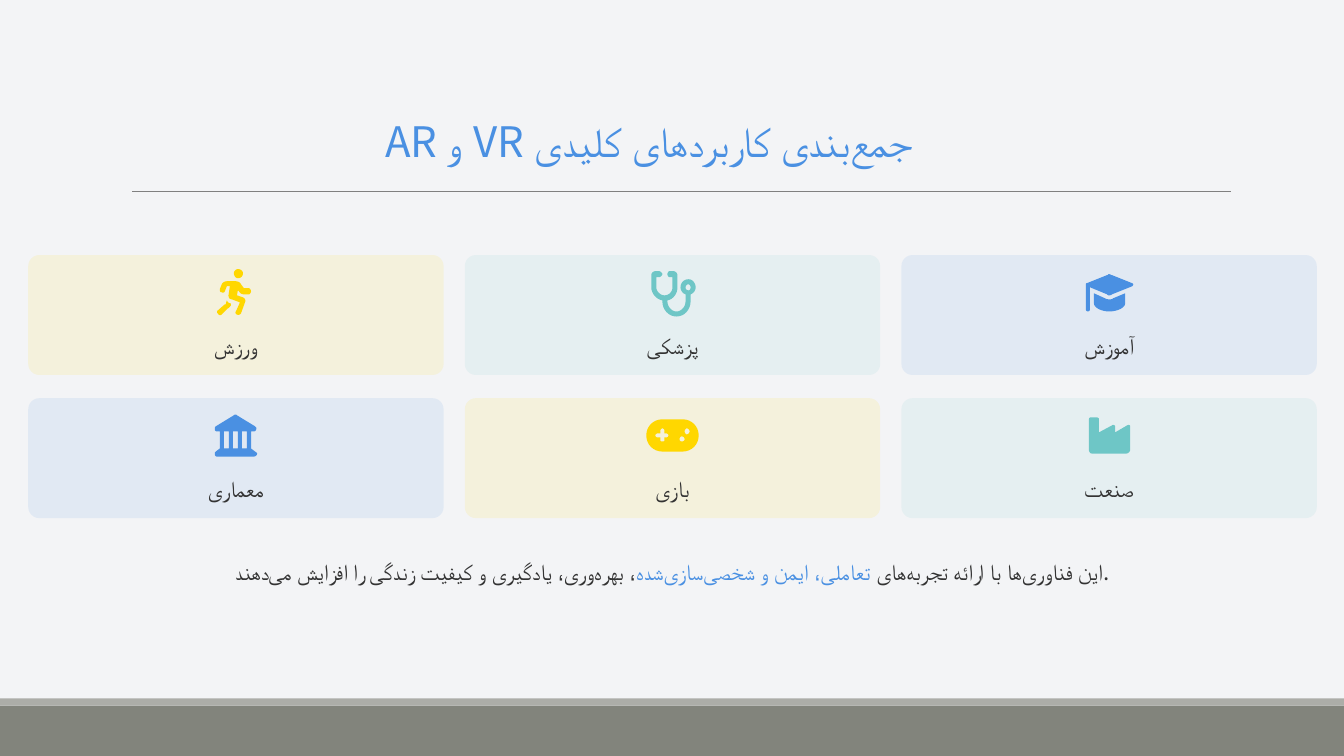
from dataclasses import dataclass

from lxml.etree import SubElement
from pptx import Presentation
from pptx.dml.color import RGBColor
from pptx.enum.shapes import MSO_CONNECTOR as Connector, MSO_SHAPE as Preset
from pptx.enum.text import MSO_ANCHOR as Anchor, MSO_AUTO_SIZE as AutoSize, PP_ALIGN as Align
from pptx.oxml.ns import qn
from pptx.shapes.autoshape import Shape
from pptx.slide import Slide
from pptx.text.text import TextFrame
from pptx.util import Emu, Pt

EMU_PER_PX = 9144  # 100 px to the inch
SLIDE_WIDTH, SLIDE_HEIGHT = 1333, 750
FONT = "Noto Sans CJK SC"
BLUE, TEAL, YELLOW, INK = "4A90E2", "6EC6C6", "FFD700", "333333"
CARD_COLORS = (BLUE, TEAL, YELLOW)
NON_JOINER = chr(0x200C)  # Persian half-space

COLUMNS = 3
CARD_WIDTH, CARD_HEIGHT, CARD_RADIUS = 412, 119, 11
RIGHT_CARD_LEFT, TOP_CARD_TOP = 894, 253
COLUMN_PITCH, ROW_PITCH = 433, 142
ICON_DROP, LABEL_DROP, LINE_HEIGHT = 16, 69, 33
CURVE_STEPS = 8

GRADUATION_CAP = """
M 4 16 L 21 23 C 22 24 22 24 23 24 C 24 24 25 24 26 23 L 46 15 C 46 15 47 14 47 13
C 47 13 46 12 46 12 L 26 4 C 25 4 24 3 23 3 C 22 3 22 4 21 4 L 1 12 C 0 12 0 13 0 13
L 0 38 C 0 39 1 40 2 40 C 3 40 4 39 4 38
M 8 22 L 8 32 C 8 36 15 40 23 40 C 32 40 39 36 39 32 L 39 22 L 27 27
C 26 28 25 28 23 28 C 22 28 21 28 19 27"""
STETHOSCOPE = """
M 2 4 C 2 2 4 0 6 0 L 10 0 C 11 0 13 2 13 3 C 13 4 11 6 10 6 L 7 6 L 7 16
C 7 20 11 24 15 24 C 20 24 23 20 23 16 L 23 6 L 20 6 C 19 6 18 4 18 3 C 18 2 19 0 20 0
L 24 0 C 26 0 28 2 28 4 L 28 16 C 28 22 24 28 18 29 L 18 30 C 18 35 22 40 27 40
C 32 40 36 35 36 30 L 36 23 C 33 22 31 19 31 16 C 31 12 34 8 39 8 C 43 8 46 12 46 16
C 46 19 44 22 41 23 L 41 30 C 41 38 35 45 27 45 C 19 45 13 38 13 30 L 13 29
C 7 28 2 22 2 16
M 39 19 C 40 19 41 18 41 16 C 41 15 40 13 39 13 C 37 13 36 15 36 16 C 36 18 37 19 39 19"""
RUNNER = """
M 20 -2 C 23 -2 25 0 25 2 C 25 5 23 7 20 7 C 18 7 16 5 16 2 C 16 0 18 -2 20 -2
M 10 15 L 9 15 L 7 20 C 7 21 5 22 4 21 C 2 21 2 19 2 18 L 4 13 C 5 11 7 10 10 10
L 17 10 C 20 10 22 11 23 13 L 26 17 L 31 17 C 32 17 33 19 33 20 C 33 21 32 23 31 23
L 26 23 C 24 23 22 22 21 20 L 20 19 L 19 24 L 25 26 C 27 27 28 29 27 31 L 23 42
C 22 43 21 44 19 43 C 18 43 17 41 18 40 L 22 31 L 14 28 C 11 28 10 25 11 22 L 12 15
M 9 29 C 10 31 11 32 13 32 L 13 34 C 12 35 12 36 10 37 L 4 43 C 3 44 1 44 0 42
C -1 41 -1 40 0 39 L 7 33 C 8 33 8 33 8 32"""
FACTORY = """
M 3 3 C 2 3 1 4 1 5 L 1 35 C 1 37 2 39 4 39 L 38 39 C 40 39 42 37 42 35 L 42 12
C 42 11 41 10 39 11 L 27 18 L 27 12 C 27 11 25 10 24 11 L 11 18 L 11 5
C 11 4 10 3 8 3"""
GAMEPAD = """
M 36 5 C 45 5 52 12 52 21 C 52 30 45 37 36 37 L 16 37 C 7 37 0 30 0 21 C 0 12 7 5 16 5
M 16 14 C 15 14 14 15 14 16 L 14 19 L 11 19 C 10 19 9 20 9 21 C 9 22 10 23 11 23
L 14 23 L 14 26 C 14 27 15 27 16 27 C 17 27 18 27 18 26 L 18 23 L 20 23
C 21 23 22 22 22 21 C 22 20 21 19 20 19 L 18 19 L 18 16 C 18 15 17 14 16 14
M 35 22 C 34 22 33 23 33 25 C 33 26 34 27 35 27 C 37 27 38 26 38 25 C 38 23 37 22 35 22
M 40 14 C 39 14 38 16 38 17 C 38 18 39 20 40 20 C 42 20 43 18 43 17 C 43 16 42 14 40 14"""
COLUMNED_HALL = """
M 19 1 C 20 0 21 0 22 1 L 40 12 C 41 13 42 14 41 15 C 41 16 40 17 39 17 L 36 17 L 36 34
L 40 37 C 41 38 42 38 42 39 C 42 41 40 42 39 42 L 2 42 C 1 42 0 41 0 39
C 0 38 0 38 1 37 L 5 34 L 5 17 L 2 17 C 1 17 0 16 0 15 C 0 14 0 13 1 12
M 27 17 L 27 34 L 32 34 L 32 17 M 18 17 L 18 34 L 23 34 L 23 17
M 9 17 L 9 34 L 14 34 L 14 17"""

Point = tuple[float, float]


@dataclass(frozen=True)
class Card:
    label: str
    label_width: int
    outline: str
    icon_width: int


CARDS = (
    Card("آموزش", 129, GRADUATION_CAP, 47),
    Card("پزشکی", 136, STETHOSCOPE, 47),
    Card("ورزش", 119, RUNNER, 36),
    Card("صنعت", 121, FACTORY, 42),
    Card("بازی", 103, GAMEPAD, 52),
    Card("معماری", 136, COLUMNED_HALL, 42),
)
TITLE = f"جمع{NON_JOINER}بندی کاربردهای کلیدی VR و AR"
SUMMARY = (
    (f"این فناوری{NON_JOINER}ها با ارائه تجربه{NON_JOINER}های ", INK),
    (f"تعاملی، ایمن و شخصی{NON_JOINER}سازی{NON_JOINER}شده", BLUE),
    (f"، بهره{NON_JOINER}وری، یادگیری و کیفیت زندگی را افزایش می{NON_JOINER}دهند.", INK),
)


def px(length: float) -> Emu:
    return Emu(round(length * EMU_PER_PX))


def rgb(color: str) -> RGBColor:
    return RGBColor.from_string(color)


def paint(shape: Shape, color: str) -> None:
    shape.shadow.inherit = False
    shape.fill.solid()
    shape.fill.fore_color.rgb = rgb(color)
    shape.line.fill.background()


def add_block(slide: Slide, preset: Preset, left: int, top: int,
              width: int, height: int, color: str) -> Shape:
    shape = slide.shapes.add_shape(preset, px(left), px(top), px(width), px(height))
    paint(shape, color)
    return shape


def format_frame(frame: TextFrame, size: int) -> None:
    """Centre the text both ways, without insets, in the slide's font."""
    frame.word_wrap = True
    frame.auto_size = AutoSize.NONE
    frame.vertical_anchor = Anchor.MIDDLE
    frame.margin_left = frame.margin_right = frame.margin_top = frame.margin_bottom = 0
    paragraph = frame.paragraphs[0]
    paragraph.alignment = Align.CENTER
    paragraph.font.name = FONT
    paragraph.font.size = Pt(size)


def add_text(slide: Slide, runs: tuple[tuple[str, str], ...],
             left: float, top: int, width: int) -> None:
    frame = slide.shapes.add_textbox(px(left), px(top), px(width), px(LINE_HEIGHT)).text_frame
    format_frame(frame, 16)
    paragraph = frame.paragraphs[0]
    paragraph.line_spacing = 1.3
    for text, color in runs:
        run = paragraph.add_run()
        run.text = text
        run.font.color.rgb = rgb(color)


def curve_points(start: Point, first: Point, second: Point, end: Point) -> list[Point]:
    points = []
    for step in range(1, CURVE_STEPS + 1):
        t = step / CURVE_STEPS
        weights = ((1 - t) ** 3, 3 * t * (1 - t) ** 2, 3 * t * t * (1 - t), t ** 3)
        corners = (start, first, second, end)
        points.append((sum(w * x for w, (x, _) in zip(weights, corners)),
                       sum(w * y for w, (_, y) in zip(weights, corners))))
    return points


def contour_points(contour: str) -> list[Point]:
    """Flatten one closed contour of L and C commands into points."""
    tokens = iter(contour.split())

    def next_point() -> Point:
        return float(next(tokens)), float(next(tokens))

    points = [next_point()]
    for command in tokens:
        if command == "L":
            points.append(next_point())
        else:
            points += curve_points(points[-1], next_point(), next_point(), next_point())
    return points


def add_icon(slide: Slide, outline: str, left: int, top: int, color: str) -> None:
    builder = None
    for contour in outline.split("M")[1:]:
        start, *rest = [(px(left + x), px(top + y)) for x, y in contour_points(contour)]
        if builder is None:
            builder = slide.shapes.build_freeform(*start)
        else:
            builder.move_to(*start)
        builder.add_line_segments(rest, close=True)
    paint(builder.convert_to_shape(), color)


def add_card(slide: Slide, card: Card, row: int, column: int) -> None:
    left = RIGHT_CARD_LEFT - column * COLUMN_PITCH
    top = TOP_CARD_TOP + row * ROW_PITCH
    color = CARD_COLORS[(row + column) % len(CARD_COLORS)]
    panel = add_block(slide, Preset.ROUNDED_RECTANGLE, left, top, CARD_WIDTH, CARD_HEIGHT, color)
    panel.adjustments[0] = CARD_RADIUS / CARD_HEIGHT
    fill_color = panel._element.spPr.find(qn("a:solidFill"))[0]
    SubElement(fill_color, qn("a:alpha"), val="10000")
    icon_left = left + (CARD_WIDTH - card.icon_width + 1) // 2
    add_icon(slide, card.outline, icon_left, top + ICON_DROP, color)
    label_left = left + (CARD_WIDTH - card.label_width) / 2
    add_text(slide, ((card.label, INK),), label_left, top + LABEL_DROP, card.label_width)


def add_title(slide: Slide) -> None:
    title = slide.shapes.title
    title.left, title.top, title.width, title.height = px(5), px(115), px(1278), px(50)
    title.text_frame.text = TITLE
    format_frame(title.text_frame, 30)
    paragraph = title.text_frame.paragraphs[0]
    paragraph.font.color.rgb = rgb(BLUE)
    paragraph._p.get_or_add_pPr().set("rtl", "1")


def add_title_rule(slide: Slide) -> None:
    rule = slide.shapes.add_connector(Connector.STRAIGHT, px(131), px(190), px(1221), px(190))
    rule.line.color.rgb = rgb("808080")
    rule.line.width = Pt(0.5)
    SubElement(rule._element.spPr, qn("a:effectLst"))


def main() -> None:
    presentation = Presentation()
    presentation.slide_width, presentation.slide_height = px(SLIDE_WIDTH), px(SLIDE_HEIGHT)
    slide = presentation.slides.add_slide(presentation.slide_layouts.get_by_name("Title Only"))
    slide.background.fill.solid()
    slide.background.fill.fore_color.rgb = rgb("F3F4F6")
    add_block(slide, Preset.RECTANGLE, 0, 700, SLIDE_WIDTH, 50, "82847C")
    add_block(slide, Preset.RECTANGLE, 0, 693, SLIDE_WIDTH, 7, "ACADA8")
    add_title_rule(slide)
    add_title(slide)
    for index, card in enumerate(CARDS):
        add_card(slide, card, *divmod(index, COLUMNS))
    add_text(slide, SUMMARY, 28, 547, 1278)
    presentation.save("out.pptx")


if __name__ == "__main__":
    main()
